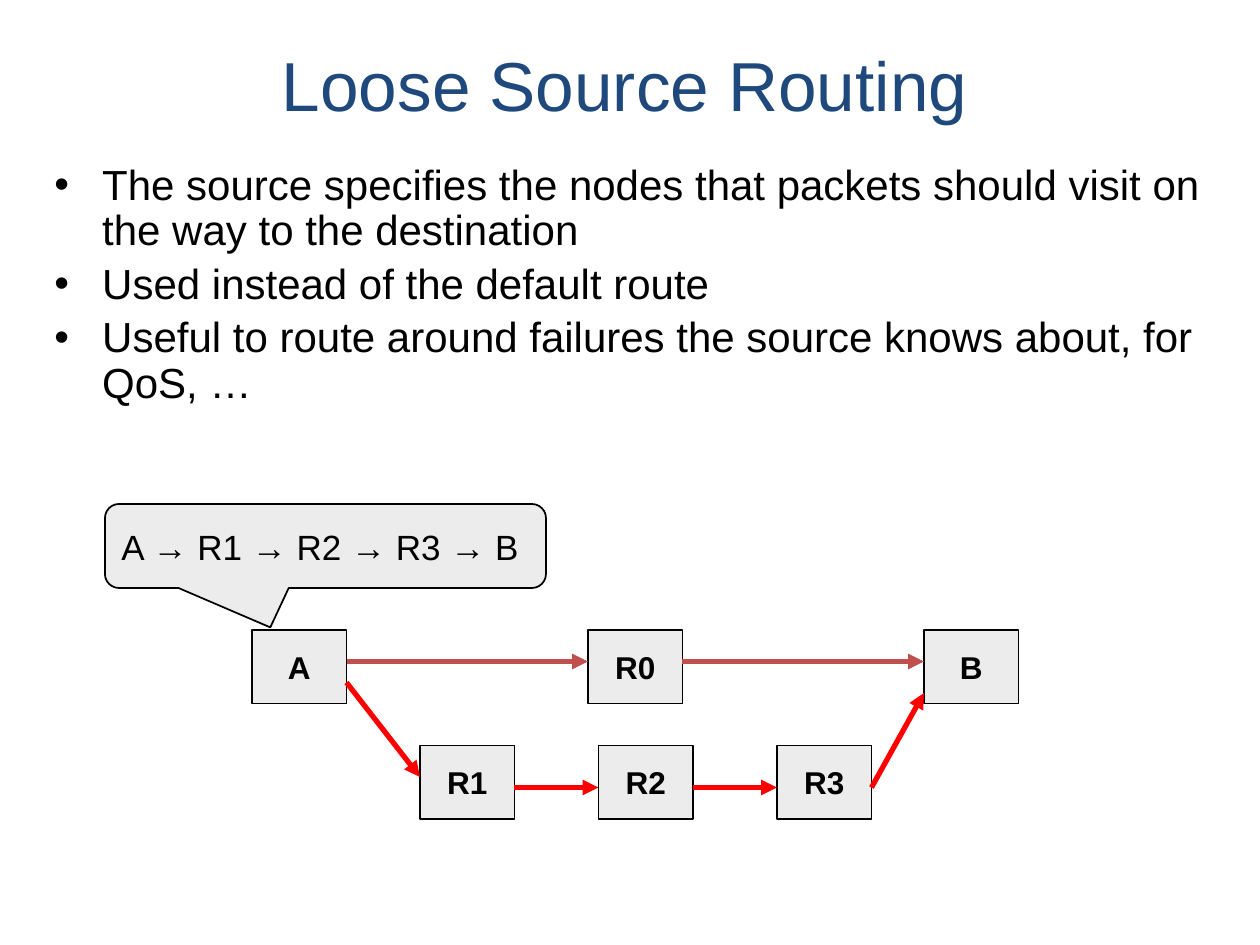
from lxml import etree
from pptx import Presentation
from pptx.dml.color import RGBColor
from pptx.enum.shapes import MSO_CONNECTOR, MSO_SHAPE
from pptx.enum.text import MSO_ANCHOR, PP_ALIGN
from pptx.oxml.ns import qn
from pptx.util import Inches, Pt

RECT, CALLOUT = MSO_SHAPE.RECTANGLE, MSO_SHAPE.ROUNDED_RECTANGULAR_CALLOUT
STRAIGHT = MSO_CONNECTOR.STRAIGHT
TOP, MIDDLE = MSO_ANCHOR.TOP, MSO_ANCHOR.MIDDLE
LEFT, CENTER = PP_ALIGN.LEFT, PP_ALIGN.CENTER

BLACK = RGBColor(0x00, 0x00, 0x00)
NAVY = RGBColor(0x1F, 0x49, 0x7D)
GRAY = RGBColor(0xEC, 0xEC, 0xEC)
BRICK = RGBColor(0xC0, 0x50, 0x4D)
RED = RGBColor(0xFF, 0x00, 0x00)

deck = Presentation()
deck.slide_width, deck.slide_height = Inches(10), Inches(7.5)
slide = deck.slides.add_slide(deck.slide_layouts[5])
shapes = slide.shapes

# Grid of 120 columns by 90 rows
UNIT = deck.slide_width // 120


def write(shape, *lines, size, color=BLACK, bold=False, align=CENTER,
          anchor=MIDDLE, wrap=False, bullet=False):
    frame = shape.text_frame
    frame.word_wrap = wrap
    frame.vertical_anchor = anchor
    frame.text = "\n".join(lines)
    for para in frame.paragraphs:
        para.alignment = align
        font = para.runs[0].font
        font.name, font.size, font.bold = "Arial", Pt(size), bold
        font.color.rgb = color
        if bullet:
            para.line_spacing = 0.9
            para.space_before = Pt(0.2 * size)
            props = para._p.get_or_add_pPr()
            props.set("marL", str(Inches(0.38)))
            props.set("indent", str(-Inches(0.38)))
            etree.SubElement(props, qn("a:buFont"), typeface="Arial")
            etree.SubElement(props, qn("a:buChar"), char="•")


def add_box(kind, col, row, wide, high):
    box = shapes.add_shape(kind, col * UNIT, row * UNIT, wide * UNIT, high * UNIT)
    box.shadow.inherit = False
    box.fill.solid()
    box.fill.fore_color.rgb = GRAY
    box.line.color.rgb = BLACK
    box.line.width = Pt(1)
    return box


# Title
title = shapes.title
title.left, title.top, title.width, title.height = (
    n * UNIT for n in (3, 4, 113, 8))
write(title, "Loose Source Routing", size=39.6, color=NAVY, wrap=True)

# Bullets
body = shapes.add_textbox(4 * UNIT, 15 * UNIT, 113 * UNIT, 26 * UNIT)
write(body,
      "The source specifies the nodes that packets should visit on the way to the destination",
      "Used instead of the default route",
      "Useful to route around failures the source knows about, for QoS, …",
      size=24, align=LEFT, anchor=TOP, wrap=True, bullet=True)

# Nodes: default route above, detour below
WIDE, HIGH = 9, 7
HIGH_ROW, LOW_ROW = 60, 71
nodes = {
    "A": (24, HIGH_ROW), "R0": (56, HIGH_ROW), "B": (88, HIGH_ROW),
    "R1": (40, LOW_ROW), "R2": (57, LOW_ROW), "R3": (74, LOW_ROW),
}
for name, (col, row) in nodes.items():
    write(add_box(RECT, col, row, WIDE, HIGH), name, size=18, bold=True)

# Source route callout
route = add_box(CALLOUT, 10, 48, 42, 8)
for i, value in enumerate((-0.125, 0.969, 0.167)):
    route.adjustments[i] = value
write(route, "A → R1 → R2 → R3 → B", size=20, align=LEFT)

# Arrows: from the right side of one node to the left side of the next,
# each end a number of rows below its node's top
links = [
    ("A", 3, "R0", 3, BRICK), ("R0", 3, "B", 3, BRICK),
    ("A", 5, "R1", 3, RED), ("R1", 4, "R2", 4, RED),
    ("R2", 4, "R3", 4, RED), ("R3", 4, "B", 6, RED),
]
for start, drop, end, dip, color in links:
    (x1, y1), (x2, y2) = nodes[start], nodes[end]
    link = shapes.add_connector(
        STRAIGHT, (x1 + WIDE) * UNIT, (y1 + drop) * UNIT,
        x2 * UNIT, (y2 + dip) * UNIT)
    link.line.color.rgb = color
    link.line.width = Pt(3)
    etree.SubElement(link.line._get_or_add_ln(), qn("a:tailEnd"), type="triangle")
    etree.SubElement(link._element.spPr, qn("a:effectLst"))

deck.save("out.pptx")
